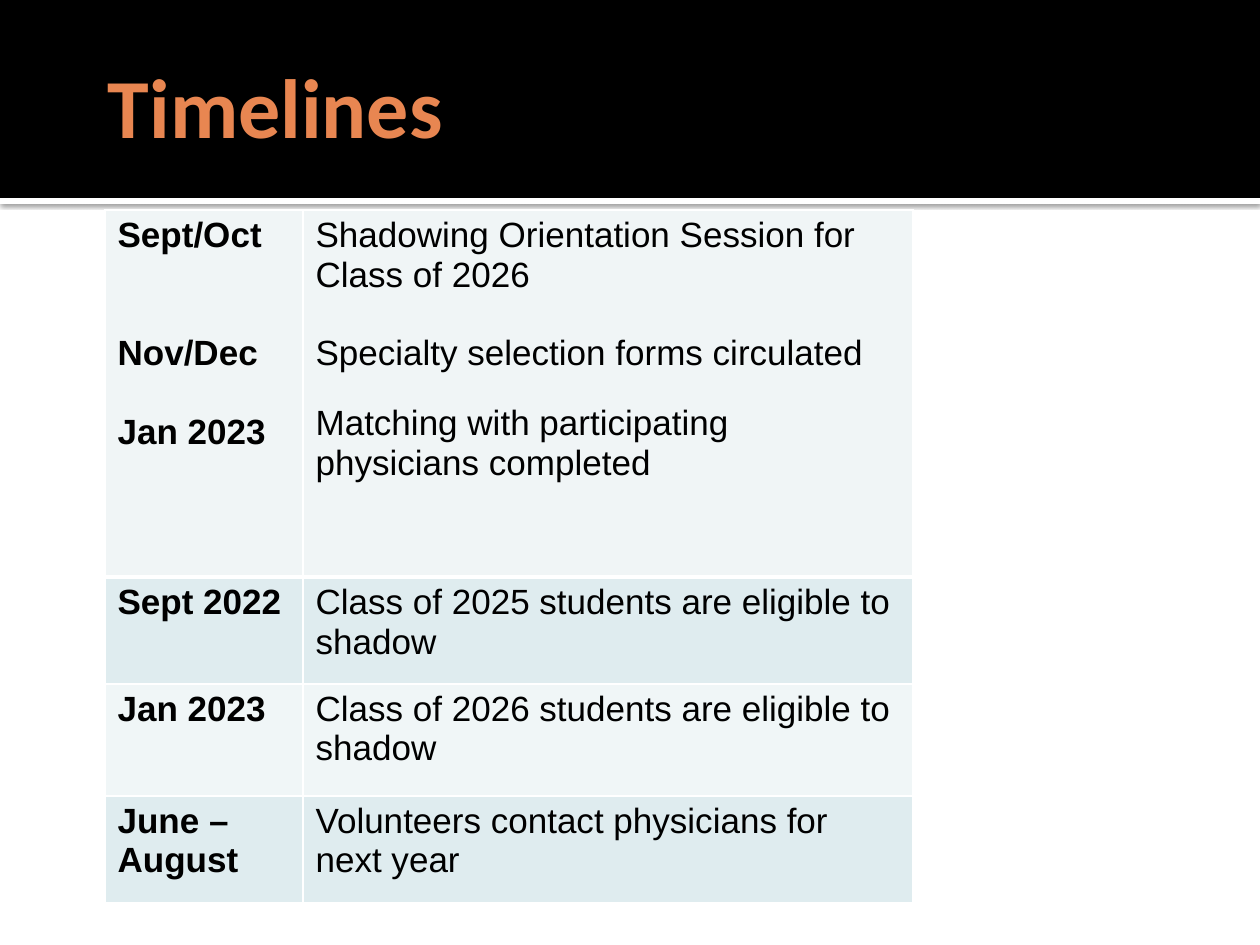
from dataclasses import dataclass

from lxml.etree import SubElement
from pptx import Presentation
from pptx.dml.color import RGBColor as Rgb
from pptx.enum.shapes import MSO_SHAPE as Shape
from pptx.enum.text import MSO_ANCHOR as Anchor
from pptx.oxml.ns import qn
from pptx.util import Emu, Pt

SCALE = 914400 / 126


@dataclass(frozen=True)
class Theme:
    black: str = "000000"
    white: str = "FFFFFF"
    accent: str = "E88651"
    pale: str = "F0F5F6"
    light: str = "F0F6F7"
    tint: str = "DFECEF"
    head: str = "Calibri"
    body: str = "Arial"
    big: int = 48
    size: int = 20
    thin: int = 1
    thick: int = 3


@dataclass(frozen=True)
class Line:
    text: str
    gap: float = 0


@dataclass(frozen=True)
class Row:
    high: int
    fill: str
    dates: tuple[Line, ...]
    events: tuple[Line, ...]


THEME = Theme()
WIDE, HIGH = 1260, 945
COLS = (198, 610)
ROWS = (
    Row(367, THEME.pale,
        (Line("Sept/Oct"), Line("Nov/Dec", 45), Line("Jan 2023", 22.5)),
        (Line("Shadowing Orientation Session for Class of 2026"),
         Line("Specialty selection forms circulated", 22.5),
         Line("Matching with participating physicians completed", 18))),
    Row(107, THEME.tint, (Line("Sept 2022"),),
        (Line("Class of 2025 students are eligible to shadow"),)),
    Row(112, THEME.light, (Line("Jan 2023"),),
        (Line("Class of 2026 students are eligible to shadow"),)),
    Row(107, THEME.tint, (Line("June – August"),),
        (Line("Volunteers contact physicians for next year"),)),
)


def px(num: int) -> Emu:
    return Emu(round(num * SCALE))


def style(para, face: str, size: int, color: str, bold: bool) -> None:
    font = para.font
    font.name, font.size, font.bold = face, Pt(size), bold
    font.color.rgb = Rgb.from_string(color)


def add_band(slide, top: int, high: int, color: str):
    """Draw a plain bar across the whole slide."""
    band = slide.shapes.add_shape(Shape.RECTANGLE, 0, px(top), px(WIDE), px(high))
    band.shadow.inherit = False
    band.fill.solid()
    band.fill.fore_color.rgb = Rgb.from_string(color)
    band.line.fill.background()
    return band


def add_shadow(shape) -> None:
    effects = shape._element.spPr.find(qn("a:effectLst"))
    outer = SubElement(effects, qn("a:outerShdw"), blurRad=str(Pt(2.5)),
                       dist=str(Pt(0.8)), dir="5400000", rotWithShape="0")
    color = SubElement(outer, qn("a:srgbClr"), val=THEME.black)
    SubElement(color, qn("a:alpha"), val="60000")


def add_title(slide, text: str) -> None:
    box = slide.shapes.add_textbox(px(95), px(73), px(494), px(63))
    frame = box.text_frame
    frame.word_wrap = True
    frame.vertical_anchor = Anchor.MIDDLE
    frame.margin_left, frame.margin_right = px(13), px(6)
    para = frame.paragraphs[0]
    para.text = text
    style(para, THEME.head, THEME.big, THEME.accent, True)


def set_edges(cell, top: int, bottom: int) -> None:
    props = cell._tc.get_or_add_tcPr()
    for side, width in zip("LRTB", (THEME.thin, THEME.thin, top, bottom)):
        edge = SubElement(props, qn(f"a:ln{side}"), w=str(Pt(width)))
        fill = SubElement(edge, qn("a:solidFill"))
        SubElement(fill, qn("a:srgbClr"), val=THEME.white)


def fill_cell(cell, lines: tuple[Line, ...], color: str, bold: bool) -> None:
    cell.fill.solid()
    cell.fill.fore_color.rgb = Rgb.from_string(color)
    frame = cell.text_frame
    for i, line in enumerate(lines):
        para = frame.add_paragraph() if i else frame.paragraphs[0]
        para.text = line.text
        if line.gap:
            para.space_before = Pt(line.gap)
        style(para, THEME.body, THEME.size, THEME.black, bold)


def add_dates(slide, rows: tuple[Row, ...]) -> None:
    """Draw the table of dates and events."""
    high = sum(row.high for row in rows)
    table = slide.shapes.add_table(len(rows), len(COLS), px(105), px(210),
                                   px(sum(COLS)), px(high)).table
    table.first_row = table.horz_banding = False
    for col, wide in zip(table.columns, COLS):
        col.width = px(wide)
    for i, row in enumerate(rows):
        table.rows[i].height = px(row.high)
        top = THEME.thick if i == 1 else THEME.thin
        bottom = THEME.thick if i == 0 else THEME.thin
        for j, lines in enumerate((row.dates, row.events)):
            cell = table.cell(i, j)
            set_edges(cell, top, bottom)
            fill_cell(cell, lines, row.fill, bold=j == 0)


def main() -> None:
    deck = Presentation()
    deck.slide_width, deck.slide_height = px(WIDE), px(HIGH)
    slide = deck.slides.add_slide(deck.slide_layouts[6])
    add_shadow(add_band(slide, 198, 6, THEME.white))
    add_band(slide, 0, 198, THEME.black)
    add_title(slide, "Timelines")
    add_dates(slide, ROWS)
    deck.save("out.pptx")


if __name__ == "__main__":
    main()
